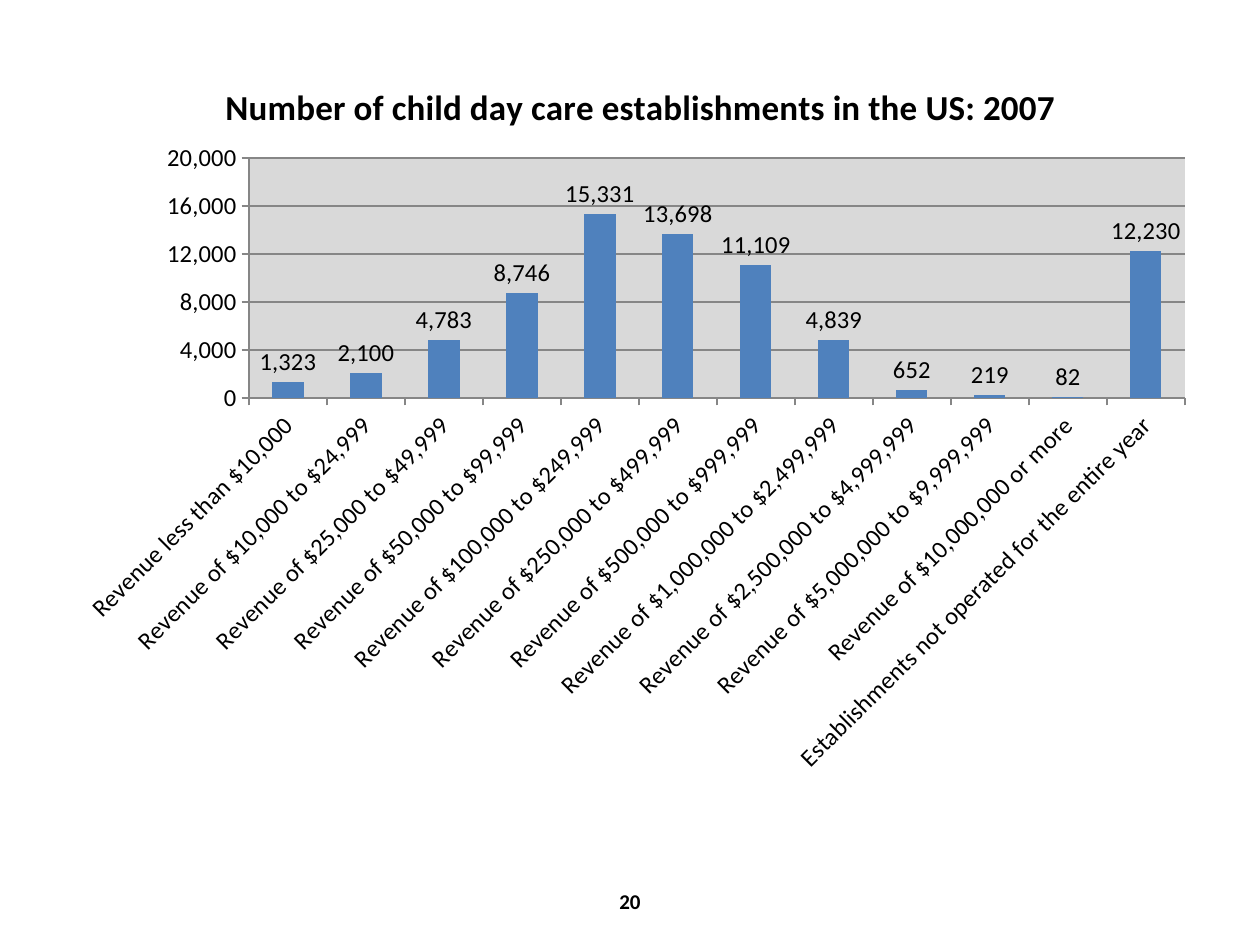
"""Build a slide charting US child day care establishments by revenue in 2007."""
from lxml import etree
from pptx import Presentation
from pptx import util as u
from pptx.chart.data import CategoryChartData
from pptx.dml.color import RGBColor
from pptx.enum import chart as charts, text
from pptx.oxml import ns

TITLE = "Number of child day care establishments in the US: 2007"
PAGE_NUMBER = "20"
ESTABLISHMENTS = [
    ("Revenue less than $10,000", 1323),
    ("Revenue of $10,000 to $24,999", 2100),
    ("Revenue of $25,000 to $49,999", 4783),
    ("Revenue of $50,000 to $99,999", 8746),
    ("Revenue of $100,000 to $249,999", 15331),
    ("Revenue of $250,000 to $499,999", 13698),
    ("Revenue of $500,000 to $999,999", 11109),
    ("Revenue of $1,000,000 to $2,499,999", 4839),
    ("Revenue of $2,500,000 to $4,999,999", 652),
    ("Revenue of $5,000,000 to $9,999,999", 219),
    ("Revenue of $10,000,000 or more", 82),
    ("Establishments not operated for the entire year", 12230),
]
COLORS = {"text": "000000", "bar": "4F81BD", "plot": "D9D9D9", "line": "868686"}
FONT = "Calibri"
NUMBER_FORMAT = "#,##0"
PX = u.Inches(1) // 126
SLIDE_SIZE = (1260, 945)
CHART_BOX = (63, 42, 1144, 746)
PLOT_BOX = (249, 158, 936, 240)
TITLE_CORNER = (219, 76)
NUMBER_BOX = (483, 876, 294, 50)


def color(name):
    return RGBColor.from_string(COLORS[name])


def style(font, size, bold=False):
    font.name, font.size, font.bold = FONT, u.Pt(size), bold
    font.color.rgb = color("text")


def write(frame, words, size, bold=True, align=text.PP_ALIGN.CENTER):
    para = frame.paragraphs[0]
    para.alignment = align
    span = para.add_run()
    span.text = words
    style(span.font, size, bold)


def place(parent, index, left, top, width=None, height=None, inner=False):
    for old in parent.findall(ns.qn("c:layout")):
        parent.remove(old)
    layout = etree.Element(ns.qn("c:layout"))
    manual = etree.SubElement(layout, ns.qn("c:manualLayout"))
    chart_left, chart_top, chart_width, chart_height = CHART_BOX
    settings = [("layoutTarget", "inner")] if inner else []
    settings += [("xMode", "edge"), ("yMode", "edge"),
                 ("x", round((left - chart_left) / chart_width, 4)),
                 ("y", round((top - chart_top) / chart_height, 4))]
    if width:
        settings += [("w", round(width / chart_width, 4)),
                     ("h", round(height / chart_height, 4))]
    for tag, value in settings:
        etree.SubElement(manual, ns.qn(f"c:{tag}")).set("val", str(value))
    parent.insert(index, layout)


def add_chart(page):
    data = CategoryChartData(number_format=NUMBER_FORMAT)
    data.categories = [name for name, _ in ESTABLISHMENTS]
    data.add_series("Series 1", [count for _, count in ESTABLISHMENTS])
    chart = page.shapes.add_chart(charts.XL_CHART_TYPE.COLUMN_CLUSTERED,
                                  *(n * PX for n in CHART_BOX), data).chart
    style(chart.font, 14)
    chart.has_legend = False
    write(chart.chart_title.text_frame, TITLE, size=20)
    chart.chart_title.include_in_layout = False
    place(chart.chart_title._element, 1, *TITLE_CORNER)

    plot = chart.plots[0]
    plot.gap_width = 150
    plot.vary_by_categories = False
    fill = plot.series[0].format.fill
    fill.solid()
    fill.fore_color.rgb = color("bar")
    plot.has_data_labels = True
    labels = plot.data_labels
    labels.show_value = True
    labels.number_format, labels.number_format_is_linked = NUMBER_FORMAT, False
    labels.position = charts.XL_LABEL_POSITION.OUTSIDE_END
    style(labels.font, 14)

    values, categories = chart.value_axis, chart.category_axis
    values.minimum_scale, values.maximum_scale = 0, 20000
    values.major_unit = 4000
    values.has_major_gridlines = True
    values.tick_labels.number_format = NUMBER_FORMAT
    values.tick_labels.number_format_is_linked = False
    for axis in (values, categories):
        axis.major_tick_mark = charts.XL_TICK_MARK.OUTSIDE
        axis.minor_tick_mark = charts.XL_TICK_MARK.NONE
        style(axis.tick_labels.font, 14)
    for part in (values, categories, values.major_gridlines):
        part.format.line.color.rgb = color("line")
        part.format.line.width = u.Pt(0.75)
    body = categories._element.find(ns.qn("c:txPr")).find(ns.qn("a:bodyPr"))
    body.set("rot", str(-45 * 60000))
    body.set("vert", "horz")

    area = chart._chartSpace.chart.plotArea
    place(area, 0, *PLOT_BOX, inner=True)
    backdrop = etree.SubElement(area, ns.qn("c:spPr"))
    solid = etree.SubElement(backdrop, ns.qn("a:solidFill"))
    etree.SubElement(solid, ns.qn("a:srgbClr")).set("val", COLORS["plot"])


def main():
    deck = Presentation()
    deck.slide_width, deck.slide_height = (n * PX for n in SLIDE_SIZE)
    page = deck.slides.add_slide(deck.slide_layouts[6])
    box = page.shapes.add_textbox(*(n * PX for n in NUMBER_BOX))
    box.text_frame.word_wrap = True
    box.text_frame.vertical_anchor = text.MSO_ANCHOR.MIDDLE
    write(box.text_frame, PAGE_NUMBER, size=12)
    add_chart(page)
    deck.save("out.pptx")


if __name__ == "__main__":
    main()
